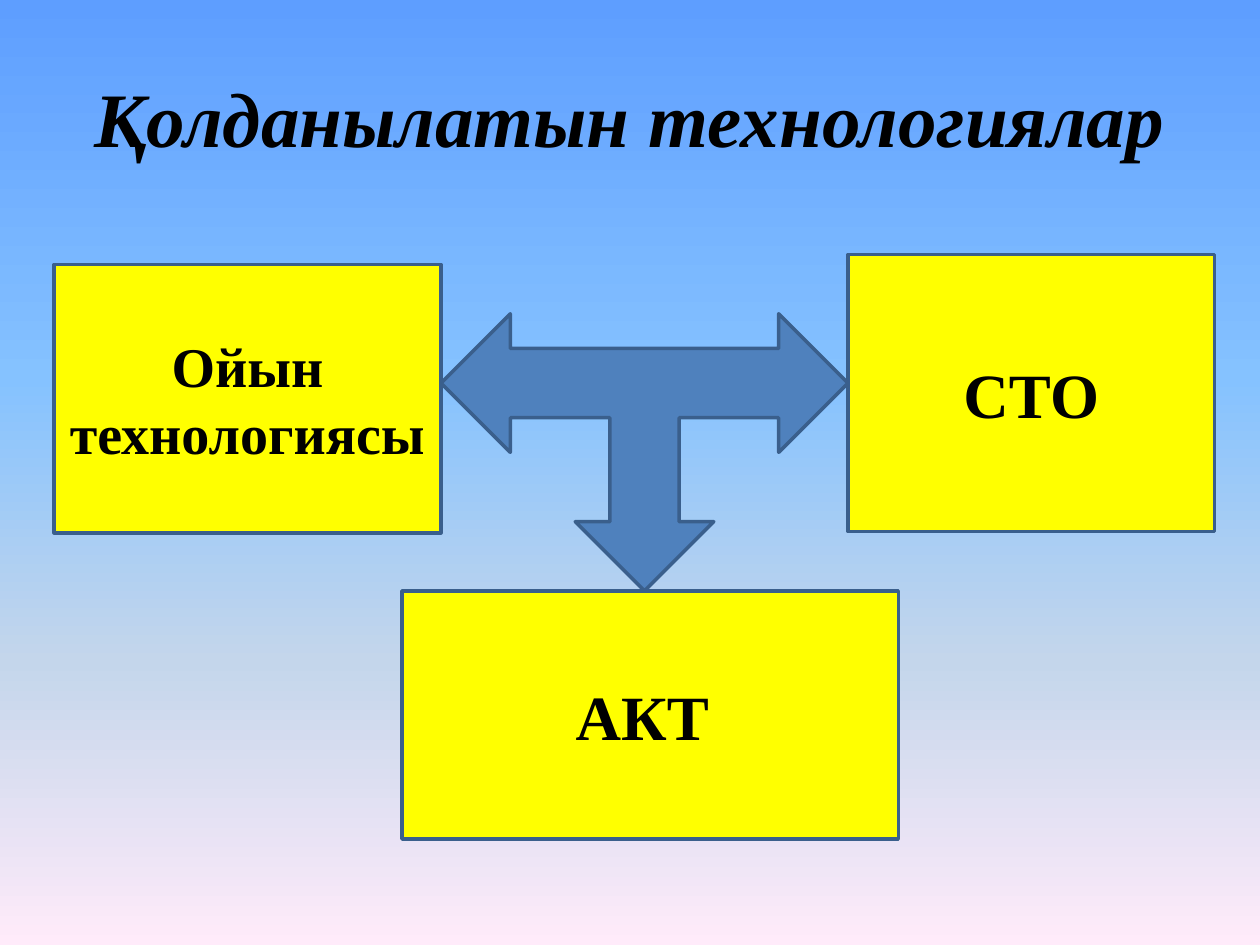
from dataclasses import dataclass

from lxml.etree import SubElement
from pptx import Presentation
from pptx.dml.color import RGBColor
from pptx.enum.shapes import MSO_SHAPE
from pptx.enum.text import MSO_ANCHOR, PP_ALIGN
from pptx.oxml.ns import qn
from pptx.util import Inches, Pt


@dataclass(frozen=True)
class Theme:
    font: str = "Times New Roman"
    text: str = "000000"
    card: str = "FFFF00"
    arrow: str = "4F81BD"
    outline: str = "3A5F8C"
    outline_width: float = 2
    title_size: int = 44
    label_size: int = 36
    long_label_size: int = 32
    sky: tuple = ((0, "5E9EFF"), (40, "85C2FF"), (70, "C4D6EB"), (100, "FFEBFA"))


THEME = Theme()


def paint_background(slide):
    fill = slide.background.fill
    fill.gradient()
    fill.gradient_angle = 270  # counter-clockwise: runs from top to bottom
    stops = slide.element.find(".//" + qn("a:gsLst"))
    for stop in list(stops):
        stops.remove(stop)
    for percent, color in THEME.sky:
        stop = SubElement(stops, qn("a:gs"), pos=str(percent * 1000))
        SubElement(stop, qn("a:srgbClr"), val=color)


def write_text(shape, text, size, italic=None):
    frame = shape.text_frame
    frame.word_wrap = True
    frame.vertical_anchor = MSO_ANCHOR.MIDDLE
    frame.text = text
    paragraph = frame.paragraphs[0]
    paragraph.alignment = PP_ALIGN.CENTER
    font = paragraph.runs[0].font
    font.name, font.size = THEME.font, Pt(size)
    font.bold, font.italic = True, italic
    font.color.rgb = RGBColor.from_string(THEME.text)


def add_title(slide, box, text):
    title = slide.shapes.title
    title.left, title.top, title.width, title.height = map(Inches, box)
    write_text(title, text, THEME.title_size, italic=True)


def add_outlined(slide, preset, box, color):
    shape = slide.shapes.add_shape(preset, *map(Inches, box))
    shape.shadow.inherit = False
    shape.fill.solid()
    shape.fill.fore_color.rgb = RGBColor.from_string(color)
    shape.line.color.rgb = RGBColor.from_string(THEME.outline)
    shape.line.width = Pt(THEME.outline_width)
    return shape


def add_technologies(slide, box):
    left, top, width, height = box
    # Cards: offset from the region's corner, size, label
    cards = (
        (0, 0.08, 3.07, 2.13, "Ойын технологиясы", THEME.long_label_size),
        (width - 2.91, 0, 2.91, 2.2, "СТО", THEME.label_size),
        (2.76, height - 1.97, 3.94, 1.97, "АКТ ", THEME.label_size),
    )
    for x, y, card_width, card_height, label, size in cards:
        card_box = (left + x, top + y, card_width, card_height)
        card = add_outlined(slide, MSO_SHAPE.RECTANGLE, card_box, THEME.card)
        write_text(card, label, size)

    # Three-way arrow filling the gap between the cards, pointing down
    arrow_box = (left + 3.07, top + 0.47, width - 3.07 - 2.91, 2.2)
    arrow = add_outlined(slide, MSO_SHAPE.LEFT_RIGHT_UP_ARROW, arrow_box, THEME.arrow)
    arrow.rotation = 180


def main():
    presentation = Presentation()
    presentation.slide_width, presentation.slide_height = Inches(10), Inches(7.5)
    slide = presentation.slides.add_slide(presentation.slide_layouts[5])
    paint_background(slide)
    add_title(slide, (0.5, 0.3, 9, 1.25), "Қолданылатын технологиялар")
    add_technologies(slide, (0.43, 2.02, 9.21, 4.64))
    presentation.save("out.pptx")


if __name__ == "__main__":
    main()
